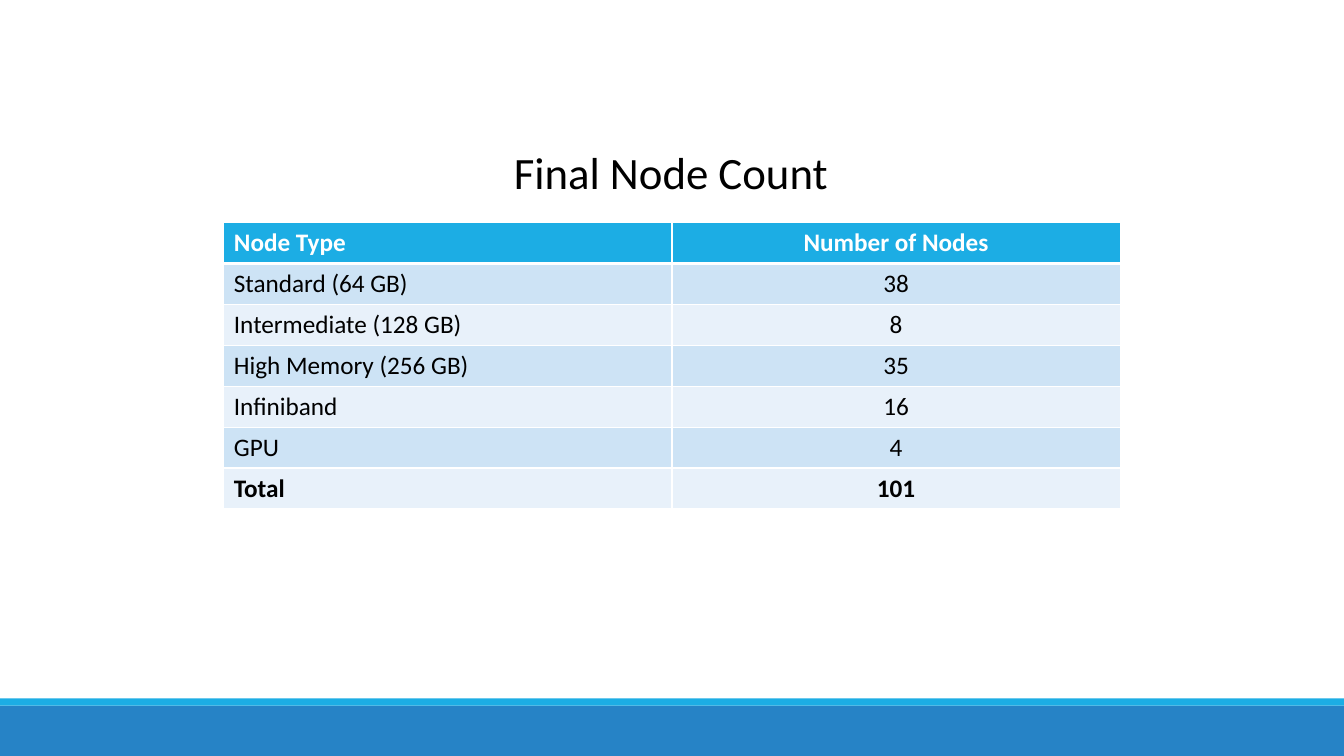
"""Build a slide with a table of node counts by node type."""
import pptx
import pptx.dml.color
import pptx.enum.shapes
import pptx.enum.text
import pptx.oxml
import pptx.oxml.ns
import pptx.util

Inches = pptx.util.Inches
Pt = pptx.util.Pt
ALIGN = pptx.enum.text.PP_ALIGN
ANCHOR = pptx.enum.text.MSO_ANCHOR

NODES = [
    ("Node Type", "Number of Nodes"),
    ("Standard (64 GB)", "38"),
    ("Intermediate (128 GB)", "8"),
    ("High Memory (256 GB)", "35"),
    ("Infiniband", "16"),
    ("GPU", "4"),
    ("Total", "101"),
]


def rgb(value):
    return pptx.dml.color.RGBColor.from_string(value)


def write(tf, text, size=18, color="000000", bold=False, align=ALIGN.LEFT, font="Calibri"):
    p = tf.paragraphs[0]
    p.alignment = align
    p.line_spacing = 1
    p.space_before = Pt(0)
    r = p.add_run()
    r.text = text
    r.font.name = font
    r.font.size = Pt(size)
    r.font.bold = bold
    r.font.color.rgb = rgb(color)


class Deck:
    header, dark, white = "1CADE4", "2683C6", "FFFFFF"
    bands = ("E8F1FA", "CDE3F5")

    def __init__(self, width, height):
        self.prs = pptx.Presentation()
        self.prs.slide_width = Inches(width)
        self.prs.slide_height = Inches(height)
        self.s = self.prs.slides.add_slide(self.prs.slide_layouts[5])
        self.s.background.fill.solid()
        self.s.background.fill.fore_color.rgb = rgb(self.white)

    def bar(self, x, y, w, h, color):
        sp = self.s.shapes.add_shape(
            pptx.enum.shapes.MSO_SHAPE.RECTANGLE, Inches(x), Inches(y), Inches(w), Inches(h))
        sp.shadow.inherit = False
        sp.fill.solid()
        sp.fill.fore_color.rgb = rgb(color)
        sp.line.fill.background()

    def title(self, text, x, y, w, h):
        sp = self.s.shapes.title
        sp.left, sp.top, sp.width, sp.height = map(Inches, (x, y, w, h))
        tf = sp.text_frame
        tf.word_wrap = True
        tf.auto_size = pptx.enum.text.MSO_AUTO_SIZE.NONE
        tf.vertical_anchor = ANCHOR.TOP
        write(tf, text, size=32, align=ALIGN.CENTER)

    def border(self, cell, side, width):
        tcPr = cell._tc.get_or_add_tcPr()
        tcPr.append(pptx.oxml.parse_xml(
            f'<a:{side} {pptx.oxml.ns.nsdecls("a")} w="{Pt(width)}"><a:solidFill>'
            f'<a:srgbClr val="{self.white}"/></a:solidFill></a:{side}>'))

    def table(self, rows, x, y, w, h):
        table = self.s.shapes.add_table(
            len(rows), len(rows[0]), Inches(x), Inches(y), Inches(w), Inches(h)).table
        for i, row in enumerate(rows):
            head = i == 0
            for j, text in enumerate(row):
                cell = table.cell(i, j)
                for side in ("lnL", "lnR", "lnT", "lnB"):
                    thick = (i, side) in ((0, "lnB"), (1, "lnT"))
                    self.border(cell, side, 3 if thick else 1)
                cell.fill.solid()
                cell.fill.fore_color.rgb = rgb(self.header if head else self.bands[i % 2])
                write(cell.text_frame, text, color=self.white if head else "000000",
                      bold=i in (0, len(rows) - 1), align=ALIGN.CENTER if j else ALIGN.LEFT)


def main():
    deck = Deck(13.33, 7.5)
    deck.bar(0, 7, 13.33, 0.5, deck.dark)
    deck.bar(0, 6.93, 13.33, 0.07, deck.header)
    deck.title("Final Node Count", 0.18, 1.39, 12.95, 1.72)
    deck.table(NODES, 2.22, 2.21, 8.89, 2.84)
    deck.prs.save("out.pptx")


if __name__ == "__main__":
    main()
